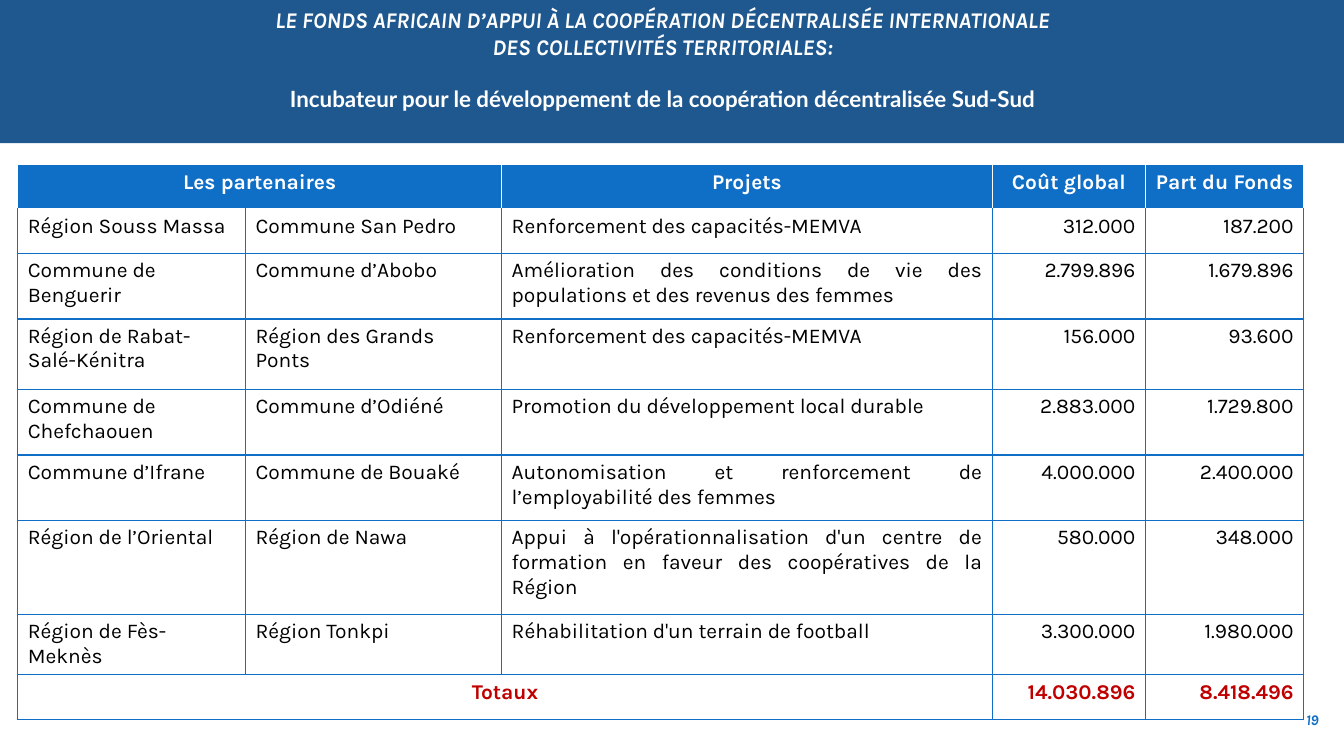
from lxml import etree
from pptx import Presentation
from pptx.dml.color import RGBColor
from pptx.enum.shapes import MSO_SHAPE
from pptx.enum.text import MSO_ANCHOR, PP_ALIGN
from pptx.oxml.ns import qn
from pptx.util import Pt

NAVY = RGBColor(0x1F, 0x58, 0x8E)
BLUE = RGBColor(0x0F, 0x6F, 0xC6)
RED = RGBColor(0xC0, 0x00, 0x00)
WHITE = RGBColor(0xFF, 0xFF, 0xFF)
BLACK = RGBColor(0x00, 0x00, 0x00)
RECT = MSO_SHAPE.RECTANGLE
MIDDLE = MSO_ANCHOR.MIDDLE
LEFT, CENTER, RIGHT, JUST = (
    PP_ALIGN.LEFT, PP_ALIGN.CENTER, PP_ALIGN.RIGHT, PP_ALIGN.JUSTIFY)

WIDTHS = [162.7, 182.9, 350.6, 109.4, 113]
HEIGHTS = [31.7, 31.7, 46.8, 50.4, 46.8, 46.8, 67, 31.7, 31.7]
ALIGNS = [LEFT, LEFT, JUST, RIGHT, RIGHT]
HEAD = ["Les partenaires", "", "Projets", "Coût global", "Part du Fonds"]
BODY = [
    ["Région Souss Massa", "Commune San Pedro",
     "Renforcement des capacités-MEMVA", "312.000", "187.200"],
    ["Commune de Benguerir", "Commune d’Abobo",
     "Amélioration des conditions de vie des populations et des revenus des femmes",
     "2.799.896", "1.679.896"],
    ["Région de Rabat-Salé-Kénitra", "Région des Grands Ponts",
     "Renforcement des capacités-MEMVA", "156.000", "93.600"],
    ["Commune de Chefchaouen", "Commune d’Odiéné",
     "Promotion du développement local durable", "2.883.000", "1.729.800"],
    ["Commune d’Ifrane", "Commune de Bouaké",
     "Autonomisation et renforcement de l’employabilité des femmes",
     "4.000.000", "2.400.000"],
    ["Région de l’Oriental", "Région de Nawa",
     "Appui à l'opérationnalisation d'un centre de formation en faveur "
     "des coopératives de la Région", "580.000", "348.000"],
    ["Région de Fès-Meknès", "Région Tonkpi",
     "Réhabilitation d'un terrain de football", "3.300.000", "1.980.000"],
]
TOTAL = ["Totaux", "", "", "14.030.896", "8.418.496"]


def add_run(para, text, size, color, bold=True, italic=False, face="Karla"):
    run = para.add_run()
    run.text = text
    font = run.font
    font.name, font.size = face, Pt(size)
    font.bold, font.italic = bold, italic
    font.color.rgb = color


def add_band(slide, width, height):
    band = slide.shapes.add_shape(RECT, 0, 0, width, height)
    band.shadow.inherit = False
    band.fill.solid()
    band.fill.fore_color.rgb = NAVY
    band.line.fill.background()


def add_box(slide, left, top, width, height):
    box = slide.shapes.add_textbox(Pt(left), Pt(top), Pt(width), Pt(height))
    frame = box.text_frame
    frame.word_wrap = True
    frame.vertical_anchor = MIDDLE
    return frame


def add_title(slide):
    frame = add_box(slide, 96.5, 8.6, 753.8, 85)
    frame.margin_top, frame.margin_bottom = 0, Pt(18)
    first = frame.paragraphs[0]
    add_run(first, "LE FONDS AFRICAIN D’APPUI À LA COOPÉRATION "
            "DÉCENTRALISÉE INTERNATIONALE", 16, WHITE, italic=True)
    first.add_line_break()
    add_run(first, "DES COLLECTIVITÉS TERRITORIALES:", 16, WHITE, italic=True)
    second = frame.add_paragraph()
    second.space_before = Pt(18)
    add_run(second, "Incubateur pour le développement de la coopération "
            "décentralisée Sud-Sud", 16, WHITE, face="Lato")
    for para in frame.paragraphs:
        para.alignment = CENTER


def add_number(slide):
    para = add_box(slide, 914.4, 500.4, 34.6, 27.4).paragraphs[0]
    para.alignment = RIGHT
    add_run(para, "19", 10.5, BLUE, italic=True)


def set_edges(cell, color, top):
    props = cell._tc.get_or_add_tcPr()
    for side, tint in zip("LRTB", (color, color, top, color)):
        line = etree.SubElement(props, qn("a:ln" + side), w=str(Pt(1)))
        fill = etree.SubElement(line, qn("a:solidFill"))
        etree.SubElement(fill, qn("a:srgbClr"), val=str(tint))


def fill_row(table, row, texts, aligns, color, bold):
    edge = WHITE if row == 0 else BLUE
    top = WHITE if row < 2 else BLUE
    for col, (text, align) in enumerate(zip(texts, aligns)):
        cell = table.cell(row, col)
        set_edges(cell, edge, top)
        if row == 0:
            cell.fill.solid()
            cell.fill.fore_color.rgb = BLUE
        else:
            cell.fill.background()
        if text:
            para = cell.text_frame.paragraphs[0]
            para.alignment = align
            add_run(para, text, 15, color, bold)


def add_grid(slide):
    last = len(HEIGHTS) - 1
    table = slide.shapes.add_table(
        len(HEIGHTS), len(WIDTHS), Pt(12.7), Pt(117.6),
        Pt(sum(WIDTHS)), Pt(sum(HEIGHTS))).table
    table.horz_banding = False
    for col, width in zip(table.columns, WIDTHS):
        col.width = Pt(width)
    for row, height in zip(table.rows, HEIGHTS):
        row.height = Pt(height)
    table.cell(0, 0).merge(table.cell(0, 1))
    table.cell(last, 0).merge(table.cell(last, 2))
    fill_row(table, 0, HEAD, [CENTER] * 5, WHITE, True)
    for row, texts in enumerate(BODY, 1):
        fill_row(table, row, texts, ALIGNS, BLACK, False)
    fill_row(table, last, TOTAL, [CENTER] * 3 + [RIGHT] * 2, RED, True)


def main():
    deck = Presentation()
    deck.slide_width, deck.slide_height = Pt(960), Pt(540)
    slide = deck.slides.add_slide(deck.slide_layouts[6])
    add_band(slide, deck.slide_width, Pt(102.2))
    add_number(slide)
    add_title(slide)
    add_grid(slide)
    deck.save("out.pptx")


if __name__ == "__main__":
    main()
